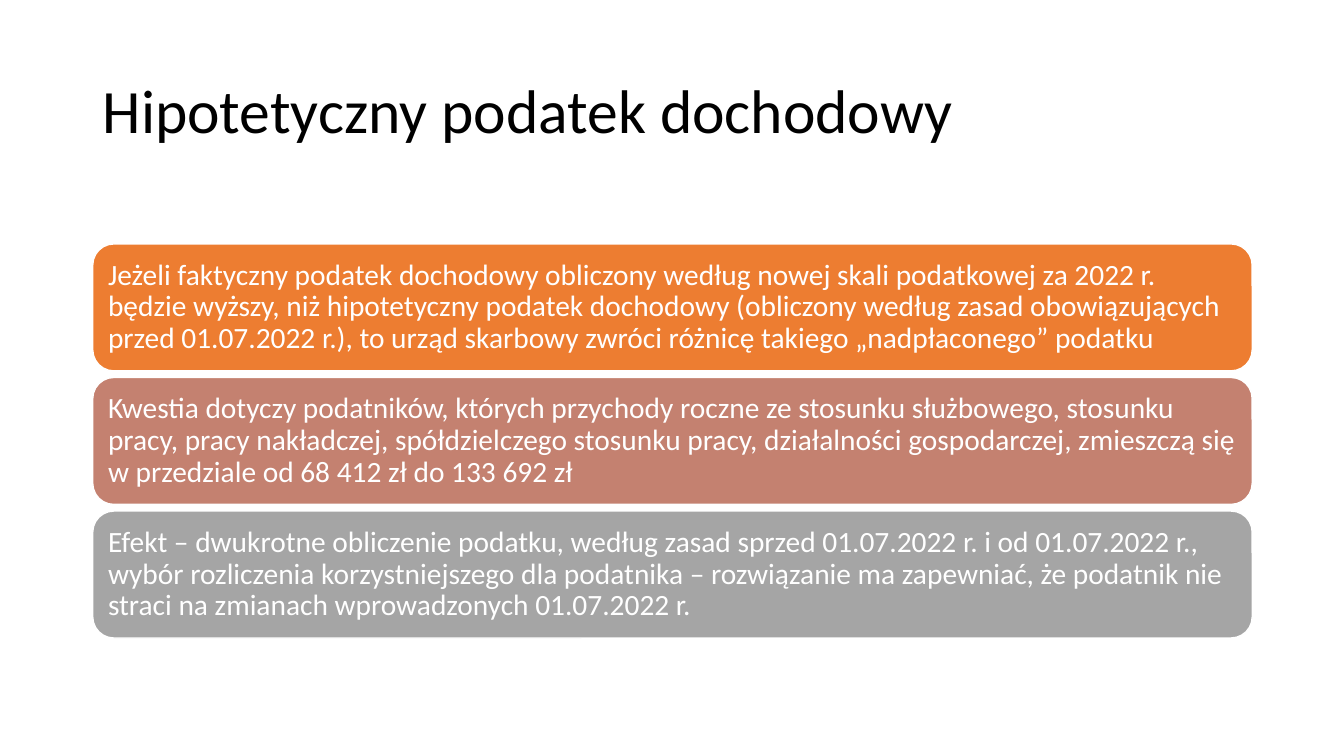
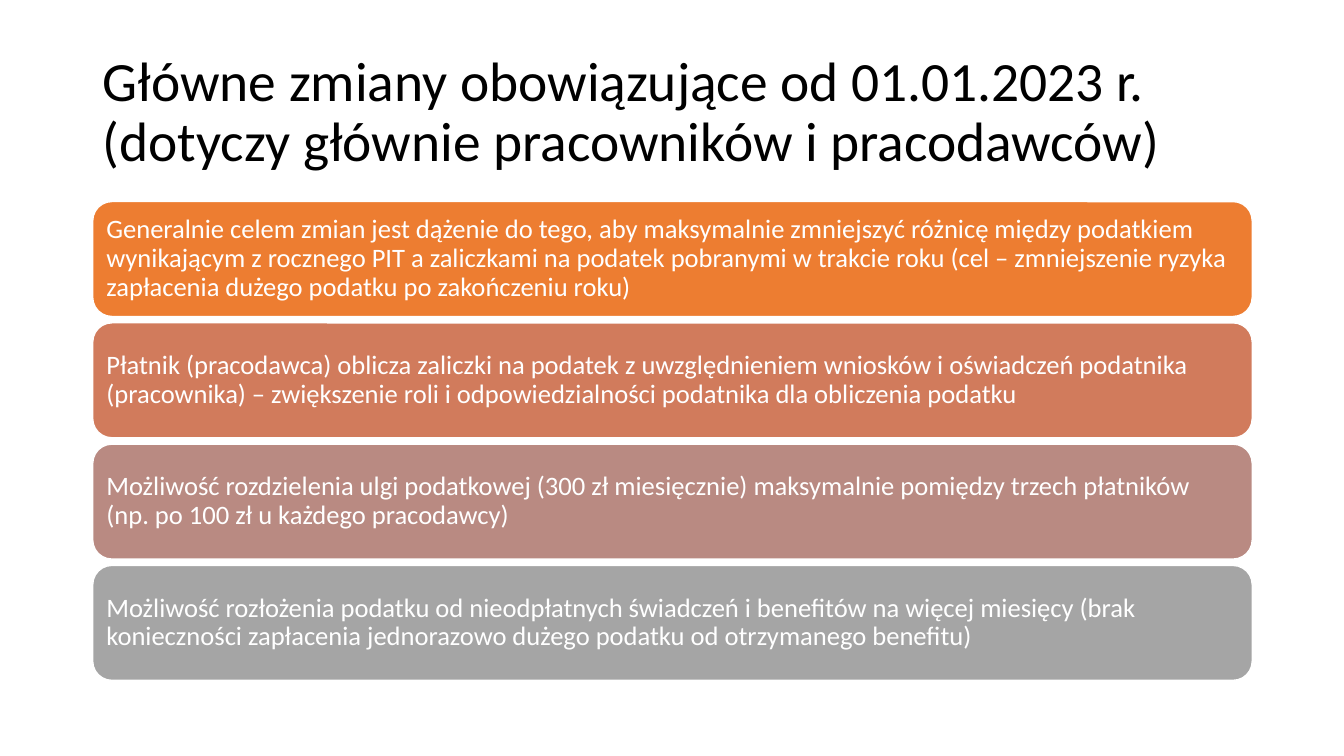
import pptx
import pptx.dml.color
import pptx.enum.shapes
import pptx.enum.text
import pptx.util

Inches = pptx.util.Inches

FONT = "Calibri"
BLACK, WHITE = "000000", "FFFFFF"
ORANGE, GRAY = "ED7D31", "A5A5A5"
LEFT, WIDTH = 0.92, 11.5

SLIDES = [
    {
        "title": "Hipotetyczny podatek dochodowy",
        "title_size": 44,
        "first_top": 2.42, "last_top": 5.07, "height": 1.26,
        "margin": 0.09, "size": 21,
        "bars": [
            (ORANGE, "Jeżeli faktyczny podatek dochodowy obliczony według nowej skali podatkowej "
                     "za 2022 r. będzie wyższy, niż hipotetyczny podatek dochodowy (obliczony według "
                     "zasad obowiązujących przed 01.07.2022 r.), to urząd skarbowy zwróci różnicę "
                     "takiego „nadpłaconego” podatku"),
            ("C48170", "Kwestia dotyczy podatników, których przychody roczne ze stosunku służbowego, "
                       "stosunku pracy, pracy nakładczej, spółdzielczego stosunku pracy, działalności "
                       "gospodarczej, zmieszczą się w przedziale od 68 412 zł do 133 692 zł"),
            (GRAY, "Efekt – dwukrotne obliczenie podatku, według zasad sprzed 01.07.2022 r. i od "
                   "01.07.2022 r., wybór rozliczenia korzystniejszego dla podatnika – rozwiązanie ma "
                   "zapewniać, że podatnik nie straci na zmianach wprowadzonych 01.07.2022 r."),
        ],
    },
    {
        "title": "Główne zmiany obowiązujące od 01.01.2023 r. "
                 "(dotyczy głównie pracowników i pracodawców)",
        "title_size": 39.6,
        "first_top": 2, "last_top": 5.61, "height": 1.14,
        "margin": 0.08, "size": 19,
        "bars": [
            (ORANGE, "Generalnie celem zmian jest dążenie do tego, aby maksymalnie zmniejszyć różnicę "
                     "między podatkiem wynikającym z rocznego PIT a zaliczkami na podatek pobranymi w "
                     "trakcie roku (cel – zmniejszenie ryzyka zapłacenia dużego podatku po zakończeniu "
                     "roku)"),
            ("D17B5C", "Płatnik (pracodawca) oblicza zaliczki na podatek z uwzględnieniem wniosków i "
                       "oświadczeń podatnika (pracownika) – zwiększenie roli i odpowiedzialności "
                       "podatnika dla obliczenia podatku"),
            ("B98A82", "Możliwość rozdzielenia ulgi podatkowej (300 zł miesięcznie) maksymalnie "
                       "pomiędzy trzech płatników (np. po 100 zł u każdego pracodawcy)"),
            (GRAY, "Możliwość rozłożenia podatku od nieodpłatnych świadczeń i benefitów na więcej "
                   "miesięcy (brak konieczności zapłacenia jednorazowo dużego podatku od otrzymanego "
                   "benefitu)"),
        ],
    },
]


def rgb(value):
    return pptx.dml.color.RGBColor.from_string(value)


def write(sp, text, size, color, margins):
    """Fill a shape with one left-aligned, vertically centred paragraph."""
    tf = sp.text_frame
    frame_format = {
        "word_wrap": True,
        "vertical_anchor": pptx.enum.text.MSO_ANCHOR.MIDDLE,
        "margin_left": Inches(margins[0]), "margin_right": Inches(margins[0]),
        "margin_top": Inches(margins[1]), "margin_bottom": Inches(margins[1]),
    }
    for name, value in frame_format.items():
        setattr(tf, name, value)
    p = tf.paragraphs[0]
    p.alignment = pptx.enum.text.PP_ALIGN.LEFT
    p.line_spacing = 0.9
    r = p.add_run()
    r.text = text
    for name, value in {"name": FONT, "size": pptx.util.Pt(size)}.items():
        setattr(r.font, name, value)
    r.font.color.rgb = rgb(color)


prs = pptx.Presentation()
prs.slide_width, prs.slide_height = Inches(13.33), Inches(7.5)

for content in SLIDES:
    s = prs.slides.add_slide(prs.slide_layouts[6])
    title = s.shapes.add_textbox(Inches(LEFT), Inches(0.4), Inches(WIDTH), Inches(1.45))
    write(title, content["title"], content["title_size"], BLACK, (0.1, 0.05))

    pitch = (content["last_top"] - content["first_top"]) / (len(content["bars"]) - 1)
    for i, (color, text) in enumerate(content["bars"]):
        bar = s.shapes.add_shape(
            pptx.enum.shapes.MSO_SHAPE.ROUNDED_RECTANGLE,
            Inches(LEFT), Inches(content["first_top"] + i * pitch),
            Inches(WIDTH), Inches(content["height"]))
        bar.shadow.inherit = False
        bar.fill.solid()
        bar.fill.fore_color.rgb = rgb(color)
        bar.line.color.rgb = rgb(WHITE)
        bar.line.width = pptx.util.Pt(1)
        write(bar, text, content["size"], WHITE, (content["margin"], content["margin"]))

prs.save("out.pptx")
